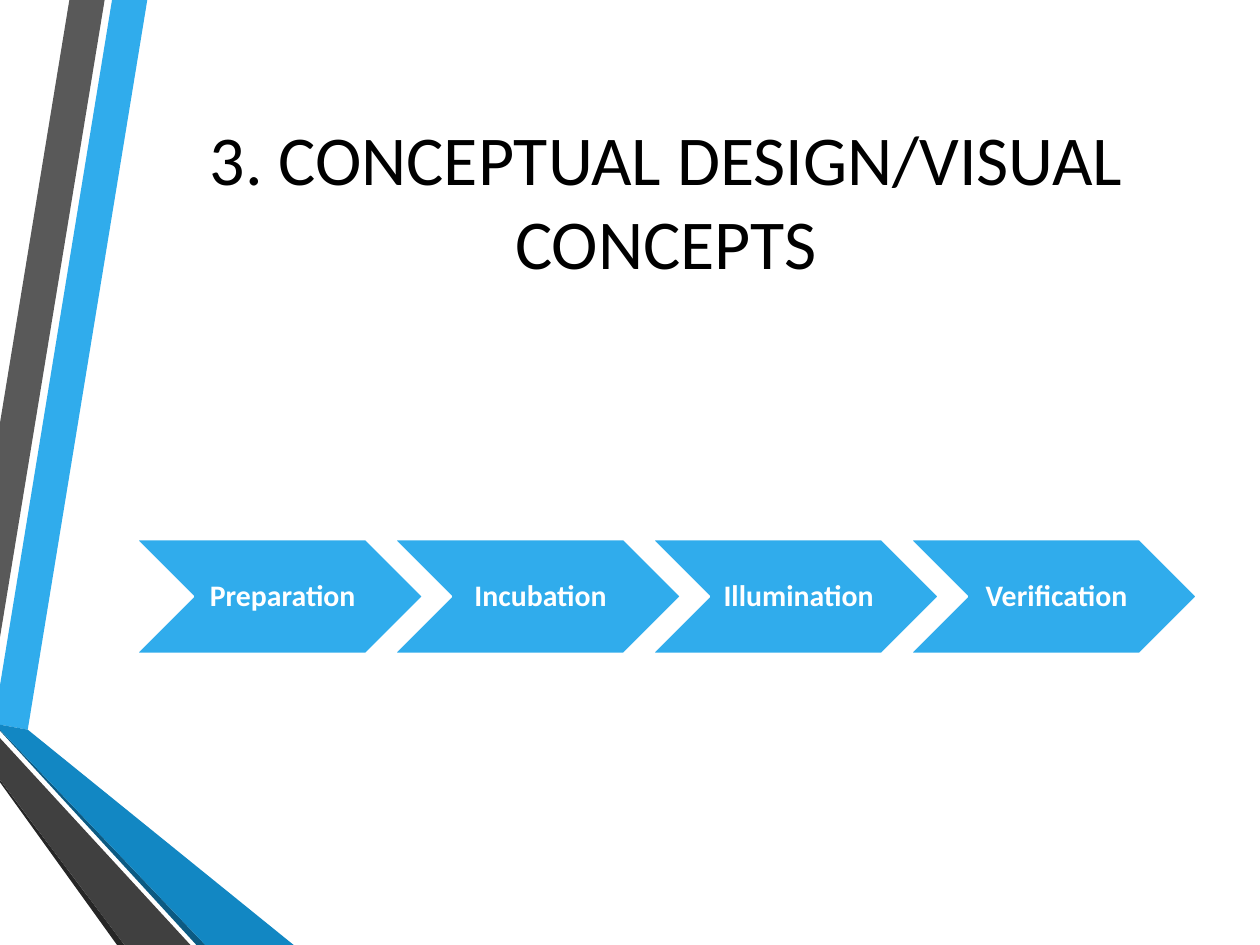
"""Build the conceptual design slide with its four-step chevron row."""
from pptx import Presentation
from pptx.dml.color import RGBColor
from pptx.enum import shapes, text
from pptx.util import Cm, Pt

BLACK = RGBColor(0x00, 0x00, 0x00)
WHITE = RGBColor(0xFF, 0xFF, 0xFF)
BLUE = RGBColor(0x30, 0xAC, 0xEC)
DEEP = RGBColor(0x12, 0x87, 0xC3)
NAVY = RGBColor(0x0C, 0x5A, 0x82)
GREY = RGBColor(0x59, 0x59, 0x59)
DARK = RGBColor(0x40, 0x40, 0x40)
COAL = RGBColor(0x26, 0x26, 0x26)

FONT = "Calibri"
TITLE = "3. CONCEPTUAL DESIGN/VISUAL CONCEPTS"
STEPS = ["Preparation", "Incubation", "Illumination", "Verification"]
LEFT, TOP, WIDTH, HEIGHT, PITCH = 2.74, 10.87, 5.79, 2.31, 5.2
BASE = 19.05
BANDS = [
    (BLUE, [(0, 13.82), (0, 14.61), (0.56, 14.71), (2.97, 0), (2.26, 0)]),
    (GREY, [(2.11, 0), (1.4, 0), (0, 8.53), (0, 12.85)]),
    (COAL, [(0, 15.72), (0, 15.77), (2.36, BASE), (2.51, BASE)]),
    (NAVY, [(0, 14.71), (0, 14.73), (3.96, BASE), (4.14, BASE)]),
    (DEEP, [(0, 14.71), (4.14, BASE), (5.92, BASE), (0.56, 14.71), (0, 14.61)]),
    (DARK, [(0, 15.72), (2.51, BASE), (3.84, BASE), (0, 14.88)]),
]


def paint(shape, color):
    shape.shadow.inherit = False
    shape.fill.solid()
    shape.fill.fore_color.rgb = color


def add_band(slide, color, points):
    first, *rest = [(Cm(x), Cm(y)) for x, y in points]
    form = slide.shapes.build_freeform(*first)
    form.add_line_segments(rest, close=True)
    band = form.convert_to_shape()
    paint(band, color)
    band.line.fill.background()


def write(shape, words, size, color, bold=False):
    frame = shape.text_frame
    frame.word_wrap = True
    frame.vertical_anchor = text.MSO_ANCHOR.MIDDLE
    para = frame.paragraphs[0]
    para.text = words
    para.alignment = text.PP_ALIGN.CENTER
    font = para.font
    font.name, font.size, font.bold = FONT, Pt(size), bold
    font.color.rgb = color
    return frame


def add_step(slide, index, words):
    step = slide.shapes.add_shape(
        shapes.MSO_SHAPE.CHEVRON,
        Cm(LEFT + index * PITCH), Cm(TOP), Cm(WIDTH), Cm(HEIGHT))
    paint(step, BLUE)
    step.line.color.rgb = WHITE
    step.line.width = Pt(1.25)
    frame = write(step, words, 17, WHITE, True)
    frame.margin_left = Cm(0.18)
    frame.margin_top = frame.margin_right = frame.margin_bottom = Cm(0.05)
    frame.paragraphs[0].line_spacing = 0.9


def main():
    deck = Presentation()
    deck.slide_width, deck.slide_height = Cm(25.4), Cm(BASE)
    slide = deck.slides.add_slide(deck.slide_layouts[6])
    for color, points in BANDS:
        add_band(slide, color, points)
    title = slide.shapes.add_textbox(Cm(2.72), Cm(1.27), Cm(21.41), Cm(5.51))
    write(title, TITLE, 40, BLACK)
    for index, words in enumerate(STEPS):
        add_step(slide, index, words)
    deck.save("out.pptx")


if __name__ == "__main__":
    main()
